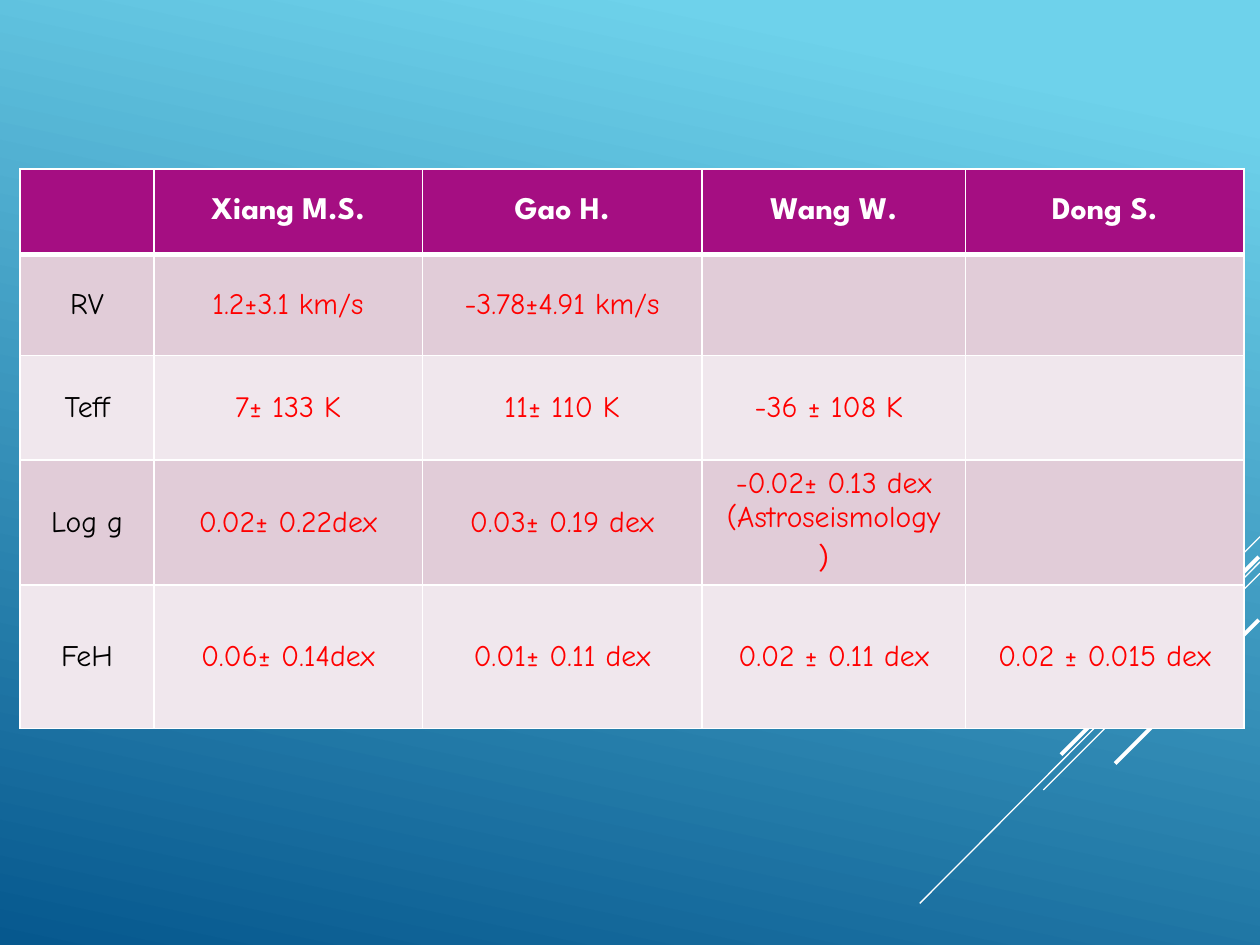
from lxml import etree
from pptx import Presentation
from pptx.dml.color import RGBColor
from pptx.enum import shapes, text
from pptx.oxml import ns
from pptx.util import Pt

WHITE = RGBColor(0xFF, 0xFF, 0xFF)
BLACK = RGBColor(0x00, 0x00, 0x00)
RED = RGBColor(0xFF, 0x00, 0x00)
PURPLE = RGBColor(0xA5, 0x0E, 0x82)
BAND_DARK = RGBColor(0xE1, 0xCC, 0xD8)
BAND_LIGHT = RGBColor(0xF0, 0xE7, 0xED)
SKY = RGBColor(0x6E, 0xD2, 0xEB)
DEEP_BLUE = RGBColor(0x06, 0x58, 0x8E)

HEADING_FONT = "League Spartan"
BODY_FONT = "Comic Neue"

RESULTS = [
    ["", "Xiang M.S.", "Gao H.", "Wang W.", "Dong S."],
    ["RV", "1.2±3.1 km/s", "-3.78±4.91 km/s", "", ""],
    ["Teff", "7± 133 K", "11± 110 K", "-36 ± 108 K ", ""],
    ["Log g", "0.02± 0.22dex", "0.03± 0.19 dex", "-0.02± 0.13 dex (Astroseismology）", ""],
    ["FeH", "0.06± 0.14dex", "0.01± 0.11 dex", "0.02 ± 0.11 dex", "0.02 ± 0.015 dex"],
]
COLUMN_WIDTHS = [76.4, 153.4, 159.9, 150.6, 159.1]
ROW_HEIGHTS = [49, 57.6, 59.8, 68.4, 82.1]

# right end x, right end y, horizontal and vertical run, line width
STREAKS = [
    (194.4, 0, 59.8, 59.8, 0.75),
    (194.4, 14.4, 194.4, 195.1, 0.75),
    (194.4, 20.9, 123.8, 123.8, 0.75),
    (193.7, 11.5, 113, 113, 2.25),
    (193.7, 47.5, 82.1, 82.1, 2.25),
]


def paint_background(page):
    fill = page.background.fill
    fill.gradient()
    fill.gradient_angle = 360 - 102
    for stop, color, position in zip(fill.gradient_stops, (SKY, DEEP_BLUE), (0.1, 1)):
        stop.color.rgb = color
        stop.position = position


def add_streaks(page, left, top):
    for x, y, across, down, width in STREAKS:
        streak = page.shapes.add_connector(
            shapes.MSO_CONNECTOR.STRAIGHT,
            Pt(left + x), Pt(top + y), Pt(left + x - across), Pt(top + y + down))
        streak.line.color.rgb = WHITE
        streak.line.width = Pt(width)
        etree.SubElement(streak.element.spPr, ns.qn("a:effectLst"))


def set_borders(cell, widths):
    properties = cell._tc.get_or_add_tcPr()
    for index, (side, width) in enumerate(widths.items()):
        line = etree.Element(ns.qn("a:ln" + side), w=str(Pt(width)))
        fill = etree.SubElement(line, ns.qn("a:solidFill"))
        etree.SubElement(fill, ns.qn("a:srgbClr"), val=str(WHITE))
        properties.insert(index, line)


def write_cell(cell, words, font, size, color, bold):
    cell.vertical_anchor = text.MSO_ANCHOR.MIDDLE
    para = cell.text_frame.paragraphs[0]
    para.alignment = text.PP_ALIGN.CENTER
    if words:
        span = para.add_run()
        span.text = words
        span.font.name = font
        span.font.size = Pt(size)
        span.font.bold = bold
        span.font.color.rgb = color


def add_results_table(page, left, top):
    table = page.shapes.add_table(
        len(RESULTS), len(RESULTS[0]), Pt(left), Pt(top),
        Pt(sum(COLUMN_WIDTHS)), Pt(sum(ROW_HEIGHTS))).table
    for column, width in zip(table.columns, COLUMN_WIDTHS):
        column.width = Pt(width)
    for row, height in zip(table.rows, ROW_HEIGHTS):
        row.height = Pt(height)

    for r, entries in enumerate(RESULTS):
        for c, words in enumerate(entries):
            cell = table.cell(r, c)
            cell.fill.solid()
            if r == 0:
                cell.fill.fore_color.rgb = PURPLE
                write_cell(cell, words, HEADING_FONT, 18, WHITE, True)
            else:
                cell.fill.fore_color.rgb = BAND_DARK if r % 2 else BAND_LIGHT
                write_cell(cell, words, BODY_FONT, 17, RED if c else BLACK, False)
            set_borders(cell, {"L": 1, "R": 1, "T": 3 if r == 1 else 1, "B": 3 if r == 0 else 1})


def main():
    deck = Presentation()
    deck.slide_width, deck.slide_height = Pt(720), Pt(540)
    page = deck.slides.add_slide(deck.slide_layouts[6])
    paint_background(page)
    add_streaks(page, 525.6, 306.7)
    add_results_table(page, 11.5, 96.5)
    deck.save("out.pptx")


if __name__ == "__main__":
    main()
